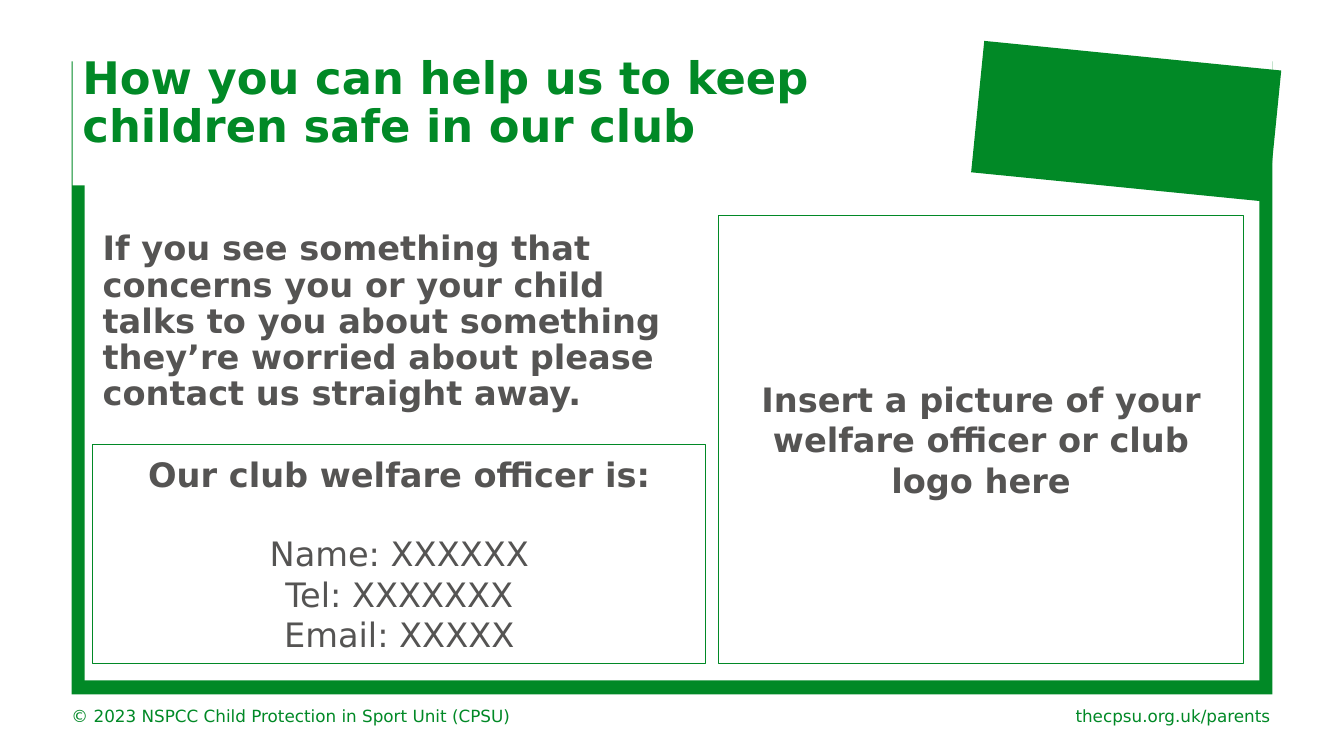
from dataclasses import dataclass
from typing import Optional

from pptx import Presentation
from pptx import util as u
from pptx.dml.color import RGBColor
from pptx.enum import shapes, text

GREEN = RGBColor(0x01, 0x89, 0x26)
GREY = RGBColor(0x55, 0x54, 0x53)
WHITE = RGBColor(0xFF, 0xFF, 0xFF)
FONT = "DejaVu Sans"
WIDTH, HEIGHT = u.Inches(13.33), u.Inches(7.5)
LEFT, CENTER, RIGHT = text.PP_ALIGN.LEFT, text.PP_ALIGN.CENTER, text.PP_ALIGN.RIGHT


@dataclass
class Area:
    """Position and size in percent of the slide's width and height."""
    x: float
    y: float
    w: float
    h: float

    def emu(self) -> tuple[int, int, int, int]:
        return (round(WIDTH * self.x / 100), round(HEIGHT * self.y / 100),
                round(WIDTH * self.w / 100), round(HEIGHT * self.h / 100))


@dataclass
class Block:
    area: Area
    fill: Optional[RGBColor] = None
    line: Optional[RGBColor] = None
    rotation: float = 0


@dataclass
class Words:
    lines: list[str]
    size: float
    color: RGBColor
    align: text.PP_ALIGN = LEFT
    bold_lines: int = 1
    spacing: float = 1.0
    gap_after_first: float = 0


def write(shape, words: Words, anchor=text.MSO_ANCHOR.TOP) -> None:
    frame = shape.text_frame
    frame.text = "\n".join(words.lines)
    frame.word_wrap = True
    frame.vertical_anchor = anchor
    for number, paragraph in enumerate(frame.paragraphs):
        paragraph.alignment = words.align
        paragraph.line_spacing = words.spacing
        if number == 1:
            paragraph.space_before = u.Pt(words.gap_after_first)
        for run in paragraph.runs:
            run.font.name = FONT
            run.font.size = u.Pt(words.size)
            run.font.bold = number < words.bold_lines
            run.font.color.rgb = words.color


def draw_block(slide, block: Block):
    shape = slide.shapes.add_shape(shapes.MSO_SHAPE.RECTANGLE, *block.area.emu())
    shape.shadow.inherit = False
    shape.rotation = block.rotation
    if block.fill is None:
        shape.fill.background()
    else:
        shape.fill.solid()
        shape.fill.fore_color.rgb = block.fill
    if block.line is None:
        shape.line.fill.background()
    else:
        shape.line.color.rgb = block.line
        shape.line.width = u.Pt(0.75)
    return shape


def draw_text(slide, area: Area, words: Words) -> None:
    write(slide.shapes.add_textbox(*area.emu()), words)


# Green frame, open at the top, with the tilted banner
FRAME = [
    Block(Area(5.33, 8.13, 89.35, 83.73), GREEN),
    Block(Area(6.3, 10, 87.4, 80), WHITE),
    Block(Area(47.56, 5.33, 47.11, 7.2), WHITE),
]
BANNER = Block(Area(72.69, 7.33, 22.21, 17.47), GREEN, rotation=5.7)

FOOTERS = [
    (Area(4.58, 92.67, 37.21, 4),
     Words(["© 2023 NSPCC Child Protection in Sport Unit (CPSU)"], 12, GREEN, bold_lines=0)),
    (Area(77.34, 92.67, 17.93, 4),
     Words(["thecpsu.org.uk/parents"], 12, GREEN, RIGHT, bold_lines=0)),
]

TITLE = Block(Area(5.4, 6.67, 66.02, 17.87), WHITE)
TITLE_WORDS = Words(["How you can help us to keep children safe in our club"],
                    32, GREEN, spacing=0.9)

ADVICE = (
    Area(6.9, 30, 45.61, 55.6),
    Words(["If you see something that concerns you or your child talks to you about "
           "something they’re worried about please contact us straight away."],
          24, GREY, spacing=0.9),
)

# Outlined panels to be filled in by the club
PANELS = [
    (Area(53.49, 28.53, 39.01, 59.2),
     Words(["Insert a picture of your welfare officer or club logo here"], 24, GREY, CENTER)),
    (Area(6.9, 58.8, 45.61, 28.93),
     Words(["Our club welfare officer is:", "Name: XXXXXX", "Tel: XXXXXXX", "Email: XXXXX"],
           24, GREY, CENTER, gap_after_first=28)),
]


def main() -> None:
    deck = Presentation()
    deck.slide_width, deck.slide_height = WIDTH, HEIGHT
    slide = deck.slides.add_slide(deck.slide_layouts[6])

    for block in FRAME:
        draw_block(slide, block)
    for area, words in FOOTERS:
        draw_text(slide, area, words)
    draw_block(slide, BANNER)

    title = draw_block(slide, TITLE)
    write(title, TITLE_WORDS)
    title.text_frame.margin_right = u.Inches(1.38)

    draw_text(slide, *ADVICE)
    for area, words in PANELS:
        panel = draw_block(slide, Block(area, line=GREEN))
        write(panel, words, text.MSO_ANCHOR.MIDDLE)

    deck.save("out.pptx")


if __name__ == "__main__":
    main()
